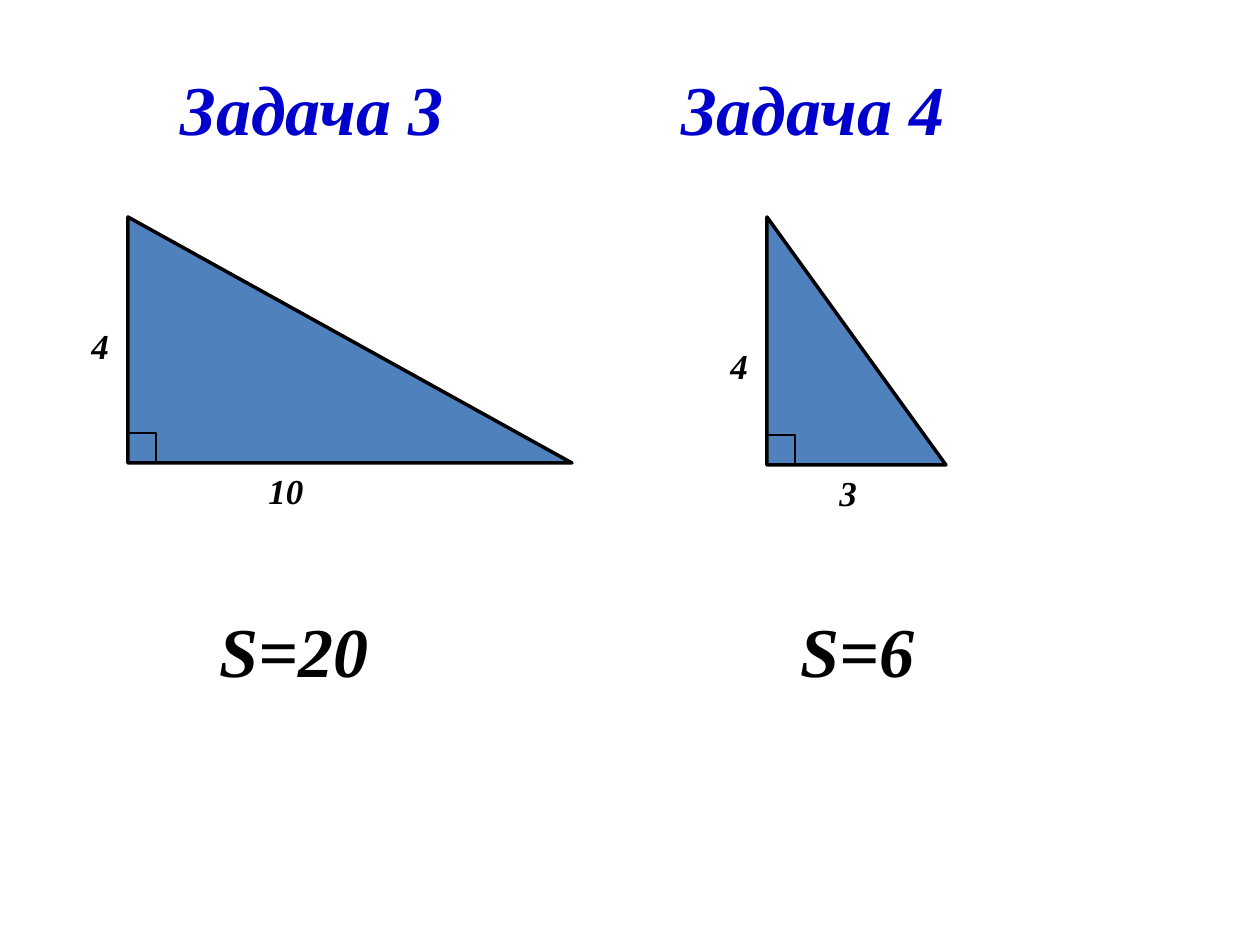
from pptx import Presentation
from pptx.dml.color import RGBColor
from pptx.enum.shapes import MSO_SHAPE
from pptx.enum.text import MSO_ANCHOR, MSO_AUTO_SIZE, PP_ALIGN
from pptx.util import Pt

SCALE = 914400 / 126
COLORS = {"title": "0000CC", "ink": "000000", "fill": "4F81BD"}
FONT = "Times New Roman"
TOP = 217
MARK = (28, 30)
TASKS = [
    {"title": "Задача 3", "head": 168, "left": 128, "size": (444, 246),
     "base": ("10", 256), "side": ("4", 79, 318), "area": ("S=20", 207)},
    {"title": "Задача 4", "head": 669, "left": 767, "size": (179, 248),
     "base": ("3", 827), "side": ("4", 718, 338), "area": ("S=6", 788)},
]


def emu(px):
    return round(px * SCALE)


def color(name):
    return RGBColor.from_string(COLORS[name])


class Board:
    def __init__(self, slide):
        self.slide = slide

    def style(self, shape, text, size, tint):
        frame = shape.text_frame
        frame.text = text
        frame.word_wrap = True
        frame.auto_size = MSO_AUTO_SIZE.NONE
        frame.vertical_anchor = MSO_ANCHOR.TOP
        line = frame.paragraphs[0]
        line.alignment = PP_ALIGN.LEFT
        for run in line.runs:
            font = run.font
            font.name, font.size = FONT, Pt(size)
            font.bold = font.italic = True
            font.color.rgb = color(tint)

    def title(self, text, *box):
        shape = self.slide.shapes.title
        shape.left, shape.top, shape.width, shape.height = map(emu, box)
        self.style(shape, text, 40, "title")

    def label(self, text, *box, size=20, tint="ink", group=None):
        shapes = (group or self.slide).shapes
        self.style(shapes.add_textbox(*map(emu, box)), text, size, tint)

    def form(self, group, kind, *box, width, fill=None):
        shape = group.shapes.add_shape(kind, *map(emu, box))
        shape.shadow.inherit = False
        if fill:
            shape.fill.solid()
            shape.fill.fore_color.rgb = color(fill)
        else:
            shape.fill.background()
        shape.line.color.rgb = color("ink")
        shape.line.width = Pt(width)

    def figure(self, task):
        group = self.slide.shapes.add_group_shape()
        left, (wide, high) = task["left"], task["size"]
        floor = TOP + high
        self.form(group, MSO_SHAPE.RIGHT_TRIANGLE, left, TOP, wide, high,
                  width=2, fill="fill")
        text, x = task["base"]
        self.label(text, x, floor, 79, 55, group=group)
        text, x, y = task["side"]
        self.label(text, x, y, 59, 55, group=group)
        self.form(group, MSO_SHAPE.RECTANGLE, left, floor - MARK[1], *MARK,
                  width=0.75)


def main():
    deck = Presentation()
    deck.slide_width, deck.slide_height = emu(1260), emu(945)
    board = Board(deck.slides.add_slide(deck.slide_layouts[5]))
    first, second = TASKS
    board.title(first["title"], first["head"], 59, 364, 97)
    board.label(second["title"], second["head"], 59, 364, 97,
                size=40, tint="title")
    for task in TASKS:
        board.figure(task)
        text, x = task["area"]
        board.label(text, x, 601, 315, 97, size=40)
    deck.save("out.pptx")


if __name__ == "__main__":
    main()
